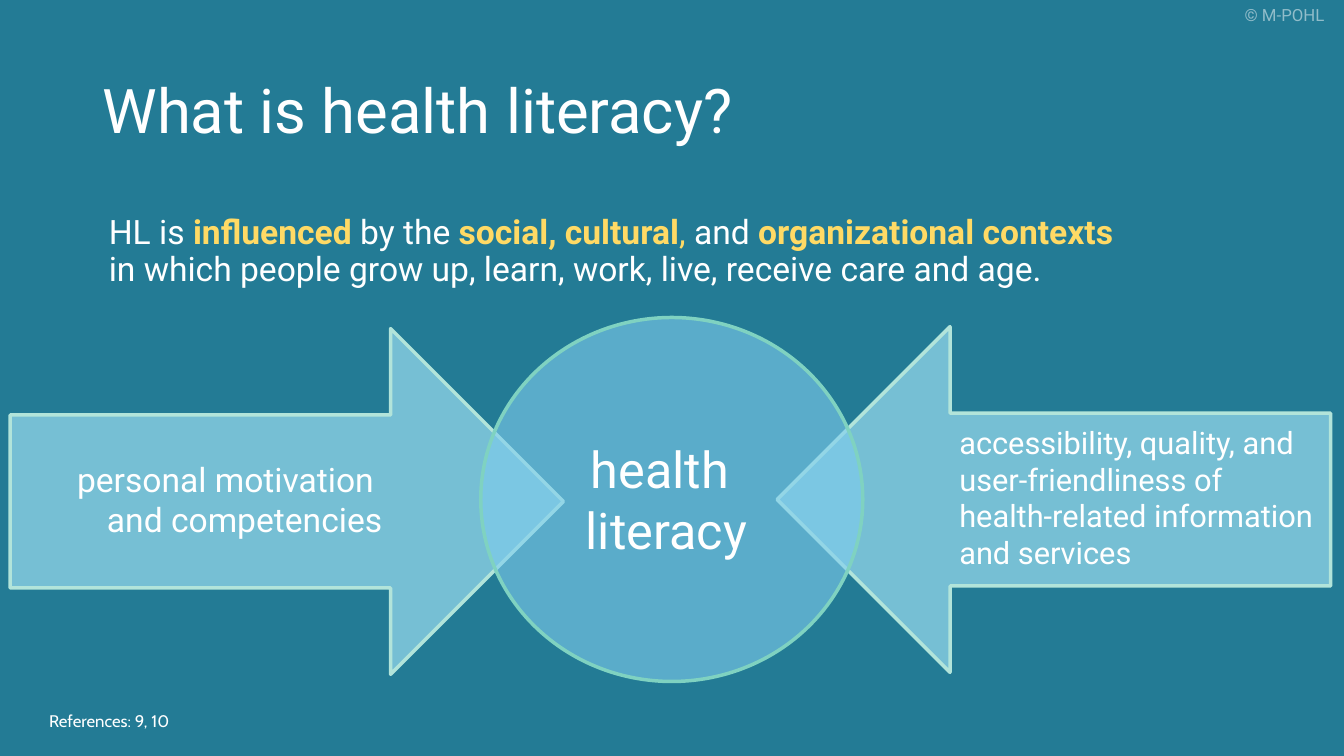
"""Build the slide on what influences health literacy."""
from dataclasses import dataclass

from lxml import etree
from pptx import Presentation
from pptx.dml.color import RGBColor
from pptx.enum import shapes, text
from pptx.oxml import ns
from pptx.util import Pt


@dataclass(frozen=True)
class Theme:
    """Colours, fonts and type sizes of the slide."""
    background: str = "237B95"
    white: str = "FFFFFF"
    highlight: str = "FFDA65"
    arrow_fill: str = "8BD0E4"
    arrow_line: str = "B2E4DA"
    circle_fill: str = "7FCDEE"
    circle_line: str = "7FD2C1"
    font: str = "Roboto"
    reference_font: str = "Cabin"
    title: float = 44
    concept: float = 36
    body: float = 24
    access: float = 22
    small: float = 12
    outline: float = 2.5


THEME = Theme()
LEFT, RIGHT, CENTER = text.PP_ALIGN.LEFT, text.PP_ALIGN.RIGHT, text.PP_ALIGN.CENTER


def rgb(value):
    """Turn a hex string into a colour."""
    return RGBColor.from_string(value)


def set_opacity(element, percent):
    """Make the first colour inside an element translucent."""
    colour = element.find(".//" + ns.qn("a:srgbClr"))
    etree.SubElement(colour, ns.qn("a:alpha")).set("val", str(percent * 1000))


def place(item, left, top, width, height):
    """Move and size a placeholder."""
    item.left, item.top, item.width, item.height = map(Pt, (left, top, width, height))


def add_run(paragraph, words, size, colour=THEME.white, bold=False, font=THEME.font):
    """Append one formatted run."""
    run = paragraph.add_run()
    run.text = words
    run.font.name = font
    run.font.size = Pt(size)
    run.font.bold = bold
    run.font.color.rgb = rgb(colour)
    return run


def add_label(slide, box, lines, size, align=LEFT, font=THEME.font,
              anchor=text.MSO_ANCHOR.TOP):
    """Add a text box with one paragraph per line and return its last run."""
    frame = slide.shapes.add_textbox(*map(Pt, box)).text_frame
    frame.word_wrap = True
    frame.vertical_anchor = anchor
    for number, line in enumerate(lines):
        paragraph = frame.add_paragraph() if number else frame.paragraphs[0]
        paragraph.alignment = align
        for part, words in enumerate(line.split("\n")):
            if part:
                paragraph.add_line_break()
            run = add_run(paragraph, words, size, font=font)
    return run


def add_figure(slide, kind, box, fill, line, opacity, rotation=0):
    """Add a translucent outlined shape."""
    figure = slide.shapes.add_shape(kind, *map(Pt, box))
    figure.shadow.inherit = False
    figure.rotation = rotation
    figure.fill.solid()
    figure.fill.fore_color.rgb = rgb(fill)
    set_opacity(figure._element.spPr, opacity)
    figure.line.color.rgb = rgb(line)
    figure.line.width = Pt(THEME.outline)


def add_arrow(slide, left, top, rotation=0):
    """Add one of the two block arrows."""
    add_figure(slide, shapes.MSO_SHAPE.RIGHT_ARROW, (left, top, 395.3, 247),
               THEME.arrow_fill, THEME.arrow_line, 80, rotation)


def fill_title(title):
    """Write the slide title."""
    place(title, 66, 28.8, 828, 104.4)
    title.text_frame.vertical_anchor = text.MSO_ANCHOR.MIDDLE
    paragraph = title.text_frame.paragraphs[0]
    paragraph.alignment = LEFT
    paragraph.line_spacing = 0.9
    add_run(paragraph, "What is health literacy?", THEME.title)


def fill_statement(body):
    """Write the statement with its highlighted words."""
    place(body, 51, 150.5, 834.5, 350)
    body.text_frame.auto_size = text.MSO_AUTO_SIZE.NONE
    paragraph = body.text_frame.paragraphs[0]
    paragraph.level = 1
    properties = paragraph._p.get_or_add_pPr()
    properties.set("marL", str(Pt(19.5)))
    properties.set("indent", "0")
    etree.SubElement(properties, ns.qn("a:buNone"))
    paragraph.line_spacing = 0.9
    paragraph.space_before = Pt(0)
    paragraph.space_after = Pt(6)
    for words, colour, bold in (
        ("HL is ", THEME.white, False),
        ("influenced ", THEME.highlight, True),
        ("by the ", THEME.white, False),
        ("social, cultural", THEME.highlight, True),
        (", ", THEME.highlight, False),
        ("and ", THEME.white, False),
        ("organizational contexts ", THEME.highlight, True),
    ):
        add_run(paragraph, words, THEME.body, colour, bold)
    paragraph.add_line_break()
    add_run(paragraph, "in which people grow up, learn, work, live, receive care and age.",
            THEME.body)


def main():
    """Build and save the slide."""
    deck = Presentation()
    deck.slide_width, deck.slide_height = Pt(960), Pt(540)
    slide = deck.slides.add_slide(deck.slide_layouts[1])
    slide.background.fill.solid()
    slide.background.fill.fore_color.rgb = rgb(THEME.background)

    copyright_run = add_label(slide, (882, 0, 90.7, 39), ["© M-POHL"], THEME.small)
    set_opacity(copyright_run._r, 50)
    fill_title(slide.shapes.title)
    fill_statement(slide.placeholders[1])

    add_arrow(slide, 555.1, 233.3, rotation=180)
    add_arrow(slide, 7.2, 234.7)
    add_label(slide, (7.2, 324, 272.9, 65.5),
              ["personal motivation ", "and competencies"], THEME.body, RIGHT)
    add_label(slide, (678.2, 298.8, 299.5, 135.4),
              ["accessibility, quality, and user-friendliness of \n"
               "health-related information \nand services"], THEME.access)
    add_label(slide, (28, 500.4, 324, 28.8), ["References: 9, 10"], THEME.small,
              font=THEME.reference_font, anchor=text.MSO_ANCHOR.MIDDLE)
    add_figure(slide, shapes.MSO_SHAPE.FLOWCHART_CONNECTOR, (343.4, 226.8, 272.9, 260),
               THEME.circle_fill, THEME.circle_line, 60)
    add_label(slide, (383.8, 309.6, 184.3, 94.3), ["health ", "literacy"],
              THEME.concept, CENTER)
    deck.save("out.pptx")


if __name__ == "__main__":
    main()
